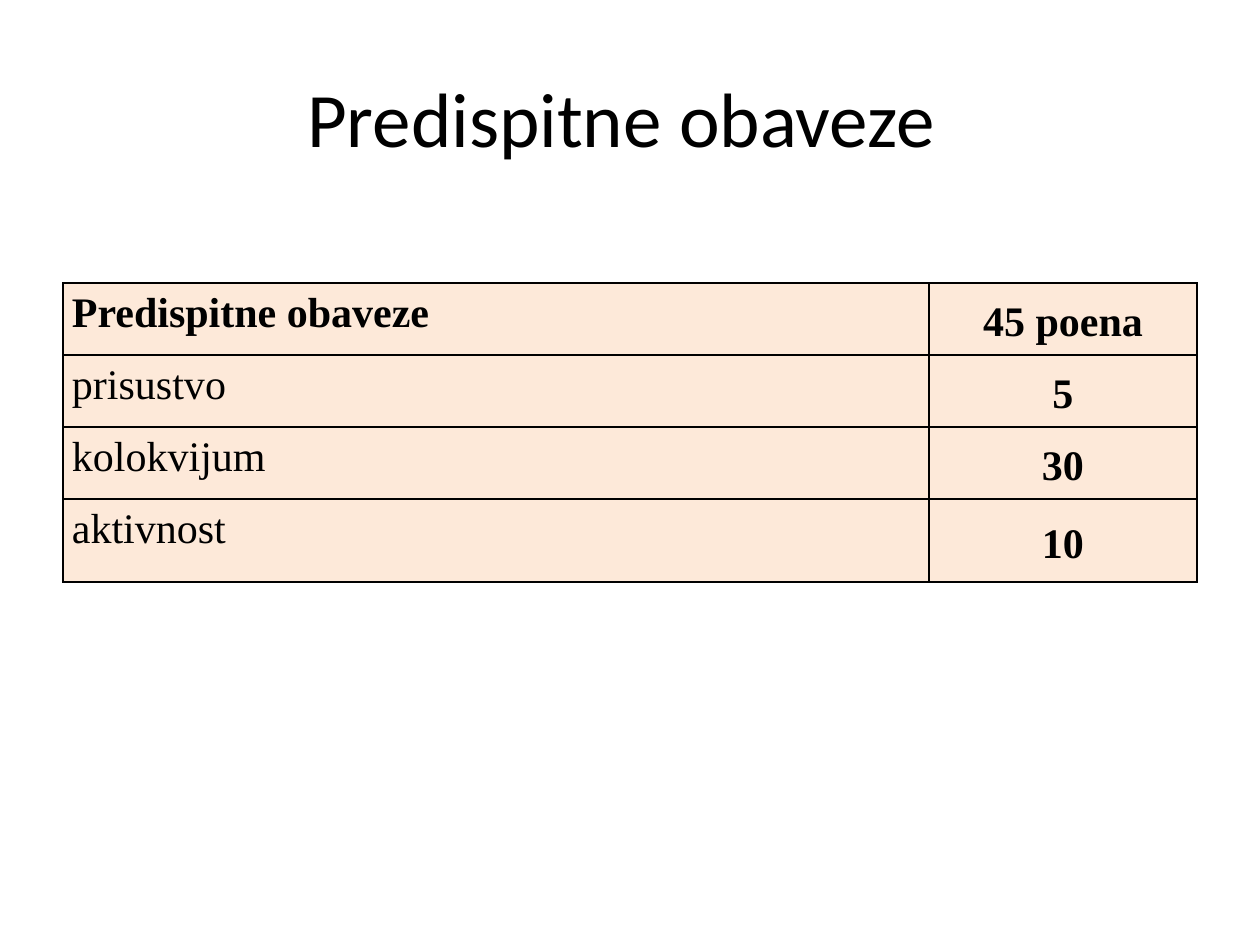
from pptx import Presentation
from pptx.dml.color import RGBColor
from pptx.enum.text import MSO_ANCHOR, PP_ALIGN
from pptx.oxml import parse_xml
from pptx.oxml.ns import nsdecls
from pptx.util import Emu, Pt

PX = 914400 // 126
COLORS = {"text": "000000", "border": "000000", "cell": "FDE9D9"}
COLS = [866, 268]
ROWS = [72, 72, 72, 83]
OBLIGATIONS = [
    ("Predispitne obaveze", "45 poena"),
    ("prisustvo", "5"),
    ("kolokvijum", "30"),
    ("aktivnost", "10"),
]


def px(n):
    """Turn whole pixels into EMU."""
    return Emu(n * PX)


def write(tf, text, align, spacing, **fmt):
    """Put one formatted run into a text frame."""
    p = tf.paragraphs[0]
    p.alignment, p.line_spacing = align, spacing
    r = p.add_run()
    r.text = text
    for name, value in fmt.items():
        setattr(r.font, name, value)
    r.font.color.rgb = RGBColor.from_string(COLORS["text"])


def add_borders(cell):
    """Draw a thin line on all four sides of a cell."""
    tcPr = cell._tc.get_or_add_tcPr()
    for i, side in enumerate(("lnL", "lnR", "lnT", "lnB")):
        tcPr.insert(i, parse_xml(
            f'<a:{side} {nsdecls("a")} w="{Pt(1)}"><a:solidFill>'
            f'<a:srgbClr val="{COLORS["border"]}"/></a:solidFill></a:{side}>'))


def add_title(s, x, y, w, h):
    """Place the centred slide title."""
    tf = s.shapes.add_textbox(px(x), px(y), px(w), px(h)).text_frame
    tf.word_wrap = True
    tf.vertical_anchor = MSO_ANCHOR.MIDDLE
    write(tf, "Predispitne obaveze ", PP_ALIGN.CENTER, 1.0, name="Calibri", size=Pt(44))


def add_points_table(s, x, y, w, h):
    """Place the table of obligations and their points."""
    table = s.shapes.add_table(len(ROWS), len(COLS), px(x), px(y), px(w), px(h)).table
    table.first_row = table.horz_banding = False
    for col, width in zip(table.columns, COLS):
        col.width = px(width)
    for i, (row, height) in enumerate(zip(table.rows, ROWS)):
        row.height = px(height)
        for j, cell in enumerate(row.cells):
            layout = {
                "margin_left": px(9), "margin_right": px(9),
                "margin_top": 0, "margin_bottom": 0,
                "vertical_anchor": MSO_ANCHOR.MIDDLE if j else MSO_ANCHOR.TOP,
            }
            for name, value in layout.items():
                setattr(cell, name, value)
            cell.fill.solid()
            cell.fill.fore_color.rgb = RGBColor.from_string(COLORS["cell"])
            add_borders(cell)
            write(cell.text_frame, OBLIGATIONS[i][j],
                  PP_ALIGN.CENTER if j else PP_ALIGN.LEFT, 1.15,
                  name="Times New Roman", size=Pt(24), bold=i == 0 or j == 1)


def main():
    """Build the slide and save it."""
    prs = Presentation()
    prs.slide_width, prs.slide_height = px(1260), px(945)
    s = prs.slides.add_slide(prs.slide_layouts[6])
    add_title(s, 63, 38, 1134, 157)
    add_points_table(s, 63, 283, sum(COLS), sum(ROWS))
    prs.save("out.pptx")


if __name__ == "__main__":
    main()
